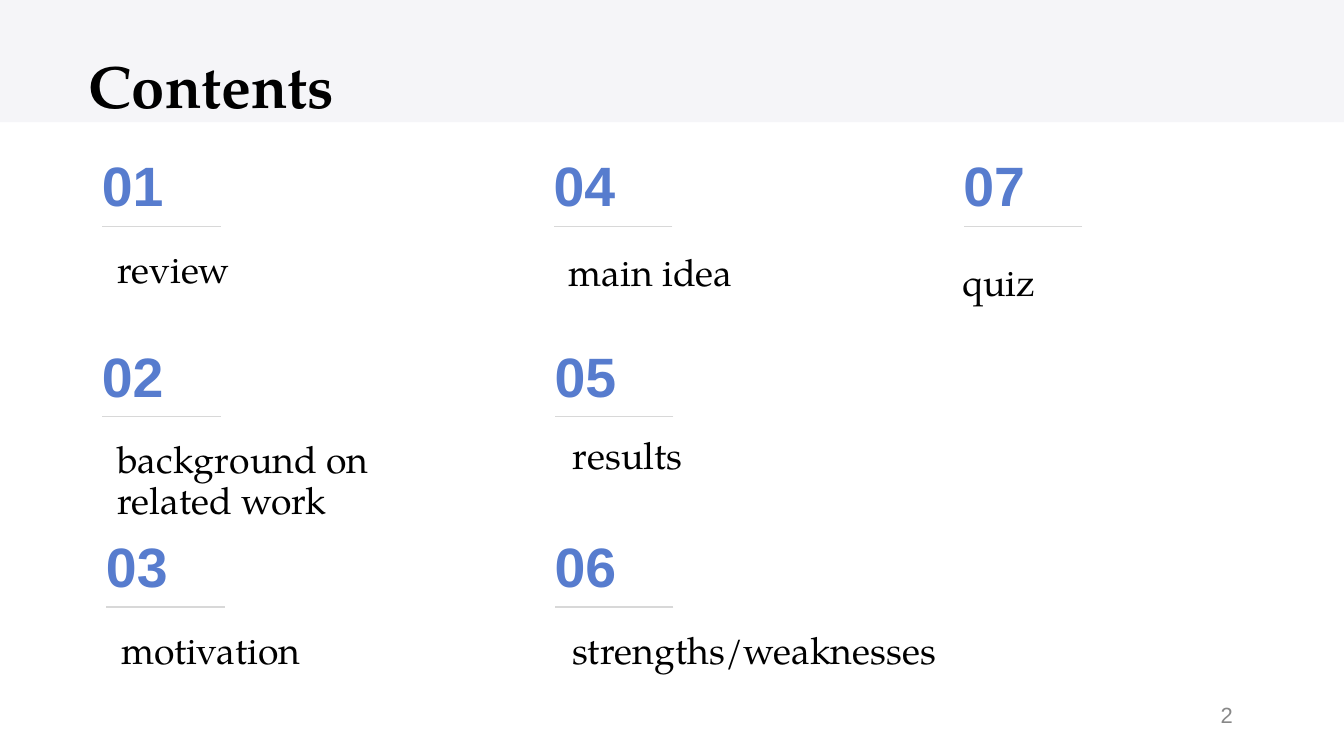
from dataclasses import dataclass

from lxml.etree import SubElement
from pptx import Presentation
from pptx.dml.color import RGBColor
from pptx.enum.shapes import MSO_CONNECTOR, MSO_SHAPE
from pptx.enum.text import MSO_ANCHOR, MSO_AUTO_SIZE, PP_ALIGN
from pptx.oxml.ns import qn
from pptx.util import Pt


@dataclass(frozen=True)
class Theme:
    band: RGBColor = RGBColor(0xF5, 0xF5, 0xF8)
    ink: RGBColor = RGBColor(0x00, 0x00, 0x00)
    accent: RGBColor = RGBColor(0x57, 0x7C, 0xCE)
    rule: RGBColor = RGBColor(0xD8, 0xD8, 0xD8)
    muted: RGBColor = RGBColor(0x88, 0x88, 0x88)
    serif: str = "TeX Gyre Pagella"
    sans: str = "Arial"
    title_size: float = 32
    number_size: float = 29.7
    topic_size: float = 20
    page_size: float = 11.8


@dataclass(frozen=True)
class Entry:
    """One numbered topic; the topic offsets start at the entry's corner."""
    topic: str
    left: float
    row: int
    topic_dx: float = -0.5
    topic_dy: float = 53.5
    topic_width: float = 190
    spacing: float = 0.9
    indent: float = 8.64
    level: int = 0


THEME = Theme()
WIDTH, HEIGHT = 720, 405
FIRST_ROW, ROW_PITCH = 77.5, 102
ENTRIES = [
    Entry("review", 47.5, 0),
    Entry("background on related work", 47.5, 1, topic_width=192),
    Entry("motivation", 49.7, 2),
    Entry("main idea", 289.5, 0, topic_dy=57, spacing=0.8),
    Entry("results", 290, 1, topic_dx=1, topic_dy=51),
    Entry("strengths/weaknesses", 290, 2, topic_dx=1, topic_width=219),
    Entry("quiz", 509, 0, topic_dy=58, topic_width=150, spacing=1,
          indent=0, level=1),
]


def add_run(paragraph, text, size, font, color, bold=False):
    run = paragraph.add_run()
    run.text = text
    run.font.size = Pt(size)
    run.font.name = font
    run.font.bold = bold
    run.font.color.rgb = color


def add_text_box(slide, left, top, width, height):
    frame = slide.shapes.add_textbox(
        Pt(left), Pt(top), Pt(width), Pt(height)).text_frame
    frame.word_wrap = True
    return frame


def add_header(slide, left, top, width, height):
    # Band, kept behind the title
    band = slide.shapes.add_shape(
        MSO_SHAPE.RECTANGLE, Pt(left), Pt(top), Pt(width), Pt(height))
    band.shadow.inherit = False
    band.fill.solid()
    band.fill.fore_color.rgb = THEME.band
    band.line.fill.background()

    # Title
    title = slide.shapes.title
    title.element.addprevious(band.element)
    title.left, title.top = Pt(left + 40.3), Pt(top + 22.3)
    title.width, title.height = Pt(163), Pt(46)
    frame = title.text_frame
    frame.auto_size = MSO_AUTO_SIZE.NONE
    frame.vertical_anchor = MSO_ANCHOR.TOP
    heading = frame.paragraphs[0]
    heading.alignment = PP_ALIGN.LEFT
    add_run(heading, "Contents", THEME.title_size, THEME.serif, THEME.ink,
            bold=True)


def add_entry(slide, number, entry, left, top):
    # Topic
    topic = add_text_box(slide, left + entry.topic_dx, top + entry.topic_dy,
                         entry.topic_width, 48).paragraphs[0]
    topic.level = entry.level
    topic.line_spacing = entry.spacing
    properties = topic._p.get_or_add_pPr()
    properties.set("marL", str(Pt(entry.indent)))
    properties.set("indent", "0")
    add_run(topic, entry.topic, THEME.topic_size, THEME.serif, THEME.ink)

    # Number
    label = add_text_box(slide, left, top, 47.5, 45).paragraphs[0]
    add_run(label, f"{number:02}", THEME.number_size, THEME.sans,
            THEME.accent, bold=True)

    # Rule under the number
    rule_left, rule_top = left + 7.2, top + 43.7
    rule = slide.shapes.add_connector(
        MSO_CONNECTOR.STRAIGHT, Pt(rule_left + 63.5), Pt(rule_top),
        Pt(rule_left), Pt(rule_top))
    rule.line.color.rgb = THEME.rule
    rule.line.width = Pt(0.75)
    SubElement(rule.element.spPr, qn("a:effectLst"))


def add_page_number(slide, left, top, width, height):
    frame = add_text_box(slide, left, top, width, height)
    frame.vertical_anchor = MSO_ANCHOR.MIDDLE
    page = frame.paragraphs[0]
    page.alignment = PP_ALIGN.RIGHT
    page.line_spacing = 0.8
    add_run(page, "2", THEME.page_size, THEME.sans, THEME.muted)


def main():
    deck = Presentation()
    deck.slide_width, deck.slide_height = Pt(WIDTH), Pt(HEIGHT)
    slide = deck.slides.add_slide(deck.slide_layouts.get_by_name("Title Only"))

    add_header(slide, 0, 0, WIDTH, 65.5)
    for number, entry in enumerate(ENTRIES, start=1):
        add_entry(slide, number, entry, entry.left,
                  FIRST_ROW + entry.row * ROW_PITCH)
    add_page_number(slide, 508.5, 375, 159, 19)

    deck.save("out.pptx")


if __name__ == "__main__":
    main()
